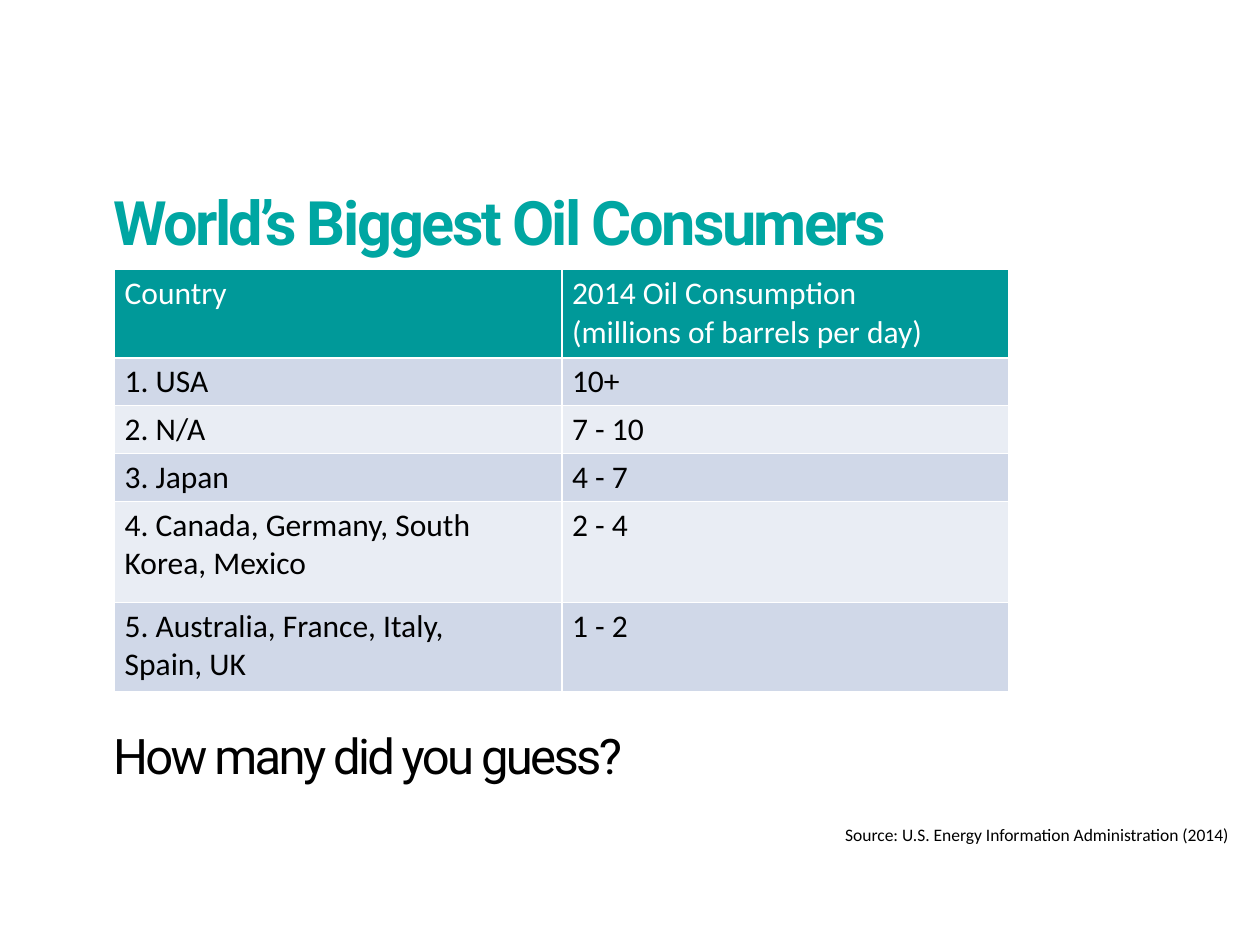
from pptx import Presentation
from pptx.dml.color import RGBColor
from pptx.enum.text import MSO_ANCHOR, MSO_AUTO_SIZE, PP_ALIGN
from pptx.util import Inches, Pt

TEAL = RGBColor(0x00, 0xA6, 0xA2)
HEADER_TEAL = RGBColor(0x00, 0x99, 0x99)
BAND_DARK = RGBColor(0xD0, 0xD8, 0xE8)
BAND_LIGHT = RGBColor(0xE9, 0xED, 0xF4)
BLACK = RGBColor(0, 0, 0)
WHITE = RGBColor(0xFF, 0xFF, 0xFF)

TOP, LEFT, NO_AUTOFIT = MSO_ANCHOR.TOP, PP_ALIGN.LEFT, MSO_AUTO_SIZE.NONE
TITLE_ONLY = 5

HEADLINE = {"name": "Roboto", "size": Pt(35), "bold": True}
QUESTION = {"name": "Roboto", "size": Pt(28), "bold": False}
CAPTION = {"name": "Calibri", "size": Pt(10), "bold": False}
CELL = {"name": "Calibri", "size": Pt(18), "bold": False}

CONSUMERS = [
    ("Country", "2014 Oil Consumption\n(millions of barrels per day)"),
    ("1. USA", "10+"),
    ("2. N/A", "7 - 10"),
    ("3. Japan", "4 - 7"),
    ("4. Canada, Germany, South Korea, Mexico", "2 - 4"),
    ("5. Australia, France, Italy,\nSpain, UK", "1 - 2"),
]
ROW_HEIGHTS = [0.7, 0.38, 0.38, 0.38, 0.8, 0.71]


def write_text(frame, text, style, color):
    """Fill a text frame, one paragraph per line, in one style."""
    frame.text = text
    for paragraph in frame.paragraphs:
        paragraph.alignment = LEFT
        for run in paragraph.runs:
            for attribute, value in style.items():
                setattr(run.font, attribute, value)
            run.font.color.rgb = color


def tighten(frame):
    """Set the fixed line pitch and close letter spacing of large text."""
    for paragraph in frame.paragraphs:
        paragraph.line_spacing = Pt(32)
        for run in paragraph.runs:
            run.font._element.set("spc", "-150")


def place_title(slide, left, top, width, height):
    title = slide.shapes.title
    title.left, title.top, title.width, title.height = left, top, width, height
    frame = title.text_frame
    frame.auto_size = NO_AUTOFIT
    frame.vertical_anchor = TOP
    write_text(frame, "World’s Biggest Oil Consumers", HEADLINE, TEAL)
    tighten(frame)


def place_text(slide, text, style, left, top, width, height):
    frame = slide.shapes.add_textbox(left, top, width, height).text_frame
    frame.word_wrap = True
    write_text(frame, text, style, BLACK)
    return frame


def place_consumers(slide, left, top, width, height):
    table = slide.shapes.add_table(
        len(CONSUMERS), len(CONSUMERS[0]), left, top, width, height).table
    for row, row_height in zip(table.rows, ROW_HEIGHTS):
        row.height = Inches(row_height)
    for r, entries in enumerate(CONSUMERS):
        if r == 0:
            fill, color = HEADER_TEAL, WHITE
        else:
            fill, color = (BAND_DARK if r % 2 else BAND_LIGHT), BLACK
        for c, entry in enumerate(entries):
            cell = table.cell(r, c)
            cell.fill.solid()
            cell.fill.fore_color.rgb = fill
            cell.margin_left = cell.margin_right = Inches(0.08)
            cell.margin_top = cell.margin_bottom = Inches(0.04)
            write_text(cell.text_frame, entry, CELL, color)


def main():
    prs = Presentation()
    prs.slide_width, prs.slide_height = Inches(10), Inches(7.5)
    slide = prs.slides.add_slide(prs.slide_layouts[TITLE_ONLY])

    # Headline
    place_title(slide, Inches(0.8), Inches(1.55), Inches(7.98), Inches(1.26))
    # Closing question
    question = place_text(slide, "How many did you guess?", QUESTION,
                          Inches(0.8), Inches(5.73), Inches(7.75), Inches(0.76))
    tighten(question)
    # Source line, up to the slide's right edge
    place_text(slide, "Source: U.S. Energy Information Administration (2014)", CAPTION,
               Inches(6.61), Inches(6.49), Inches(3.39), Inches(0.27))
    # Ranking table
    place_consumers(slide, Inches(0.91), Inches(2.14), Inches(7.1), Inches(3.35))

    prs.save("out.pptx")


if __name__ == "__main__":
    main()
